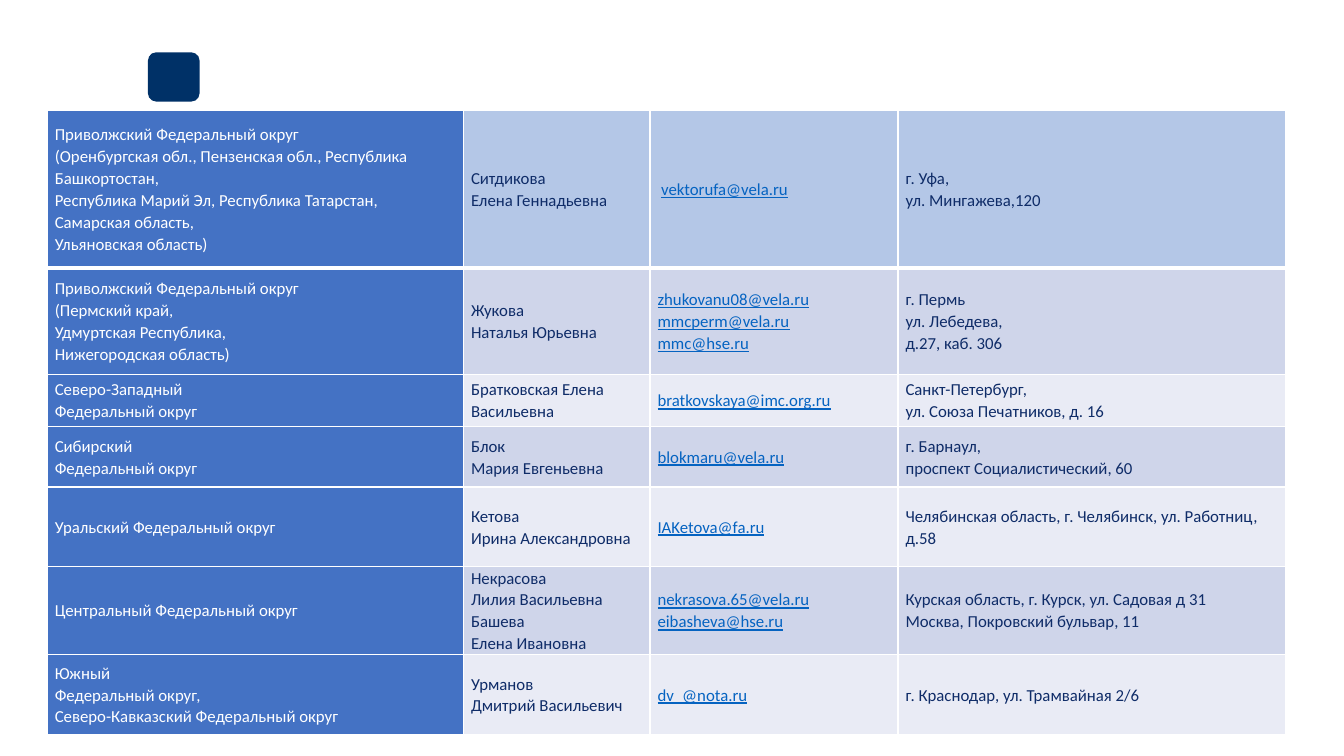
import pptx
import pptx.util
import pptx.dml.color
import pptx.enum.shapes
import pptx.enum.text
from lxml import etree
from pptx.util import Cm, Pt

INK = {
    "white": "FFFFFF", "head": "4472C4", "top": "B4C7E7", "odd": "CFD5EA",
    "even": "E9EBF5", "text": "0F2C68", "link": "0563C1", "mark": "003167",
}
FONT = "Calibri"
WIDTHS = [10.49, 4.7, 6.25, 9.78]
HEIGHTS = [3.99, 2.67, 1.32, 1.52, 2.01, 1.83, 2.03]
MAIL = 2  # column of e-mail addresses

# District, contact, e-mail, address
ROWS = [
    ("Приволжский Федеральный округ\n"
     "(Оренбургская обл., Пензенская обл., Республика Башкортостан,\n"
     "Республика Марий Эл, Республика Татарстан, Самарская область,\n"
     "Ульяновская область)",
     "Ситдикова\nЕлена Геннадьевна",
     "vektorufa@vela.ru",
     "г. Уфа,\nул. Мингажева,120"),
    ("Приволжский Федеральный округ\n(Пермский край,\n"
     "Удмуртская Республика,\nНижегородская область)",
     "Жукова\nНаталья Юрьевна",
     "zhukovanu08@vela.ru\nmmcperm@vela.ru\nmmc@hse.ru",
     "г. Пермь\nул. Лебедева,\nд.27, каб. 306"),
    ("Северо-Западный\nФедеральный округ",
     "Братковская Елена Васильевна",
     "bratkovskaya@imc.org.ru",
     "Санкт-Петербург,\nул. Союза Печатников, д. 16"),
    ("Сибирский\nФедеральный округ",
     "Блок\nМария Евгеньевна",
     "blokmaru@vela.ru",
     "г. Барнаул,\nпроспект Социалистический, 60"),
    ("Уральский Федеральный округ",
     "Кетова\nИрина Александровна",
     "IAKetova@fa.ru",
     "Челябинская область, г. Челябинск, ул. Работниц, д.58"),
    ("Центральный Федеральный округ",
     "Некрасова\nЛилия Васильевна\nБашева\nЕлена Ивановна",
     "nekrasova.65@vela.ru\neibasheva@hse.ru",
     "Курская область, г. Курск, ул. Садовая д 31\n"
     "Москва, Покровский бульвар, 11"),
    ("Южный\nФедеральный округ,\nСеверо-Кавказский Федеральный округ",
     "Урманов\nДмитрий Васильевич",
     "dv_@nota.ru",
     "г. Краснодар, ул. Трамвайная 2/6"),
]


def color(name):
    return pptx.dml.color.RGBColor.from_string(INK[name])


def paint(item, name):
    item.fill.solid()
    item.fill.fore_color.rgb = color(name)


def add_mark(slide):
    mark = slide.shapes.add_shape(
        pptx.enum.shapes.MSO_SHAPE.ROUNDED_RECTANGLE,
        Cm(3.73), Cm(1.32), Cm(1.3), Cm(1.24))
    mark.shadow.inherit = False
    paint(mark, "mark")
    mark.line.fill.background()


def set_edges(cell, row):
    """Draw white cell edges, thick between the first two rows."""
    thick = {0: "B", 1: "T"}.get(row)
    props = cell._tc.get_or_add_tcPr()
    space = props.nsmap["a"]
    for side in "LRTB":
        width = Pt(3 if side == thick else 1)
        line = etree.SubElement(props, f"{{{space}}}ln{side}", w=str(width))
        fill = etree.SubElement(line, f"{{{space}}}solidFill")
        etree.SubElement(fill, f"{{{space}}}srgbClr", val=INK["white"])


def shade(row, col):
    if col == 0:
        return "head"
    if row == 0:
        return "top"
    return "odd" if row % 2 else "even"


def fill_cell(cell, text, row, col):
    set_edges(cell, row)
    paint(cell, shade(row, col))
    cell.vertical_anchor = pptx.enum.text.MSO_ANCHOR.MIDDLE
    cell.margin_left = cell.margin_right = Cm(0.19)
    cell.margin_top = cell.margin_bottom = 0
    if (row, col) == (0, MAIL):
        cell.margin_left = Cm(0.28)
    cell.text = text
    for para in cell.text_frame.paragraphs:
        para.line_spacing = 1.07
        font = para.font
        font.name, font.size, font.bold = FONT, Pt(12), False
        font.color.rgb = color({0: "white", MAIL: "link"}.get(col, "text"))
        font.underline = col == MAIL


def add_grid(slide):
    frame = slide.shapes.add_table(
        len(ROWS), len(WIDTHS), Cm(1.19), Cm(2.77),
        Cm(sum(WIDTHS)), Cm(sum(HEIGHTS)))
    grid = frame.table
    for col, width in zip(grid.columns, WIDTHS):
        col.width = Cm(width)
    for row, height in zip(grid.rows, HEIGHTS):
        row.height = Cm(height)
    for row, texts in enumerate(ROWS):
        for col, text in enumerate(texts):
            fill_cell(grid.cell(row, col), text, row, col)


def main():
    deck = pptx.Presentation()
    deck.slide_width, deck.slide_height = Cm(33.87), Cm(19.05)
    slide = deck.slides.add_slide(deck.slide_layouts[6])
    add_mark(slide)
    add_grid(slide)
    deck.save("out.pptx")


if __name__ == "__main__":
    main()
